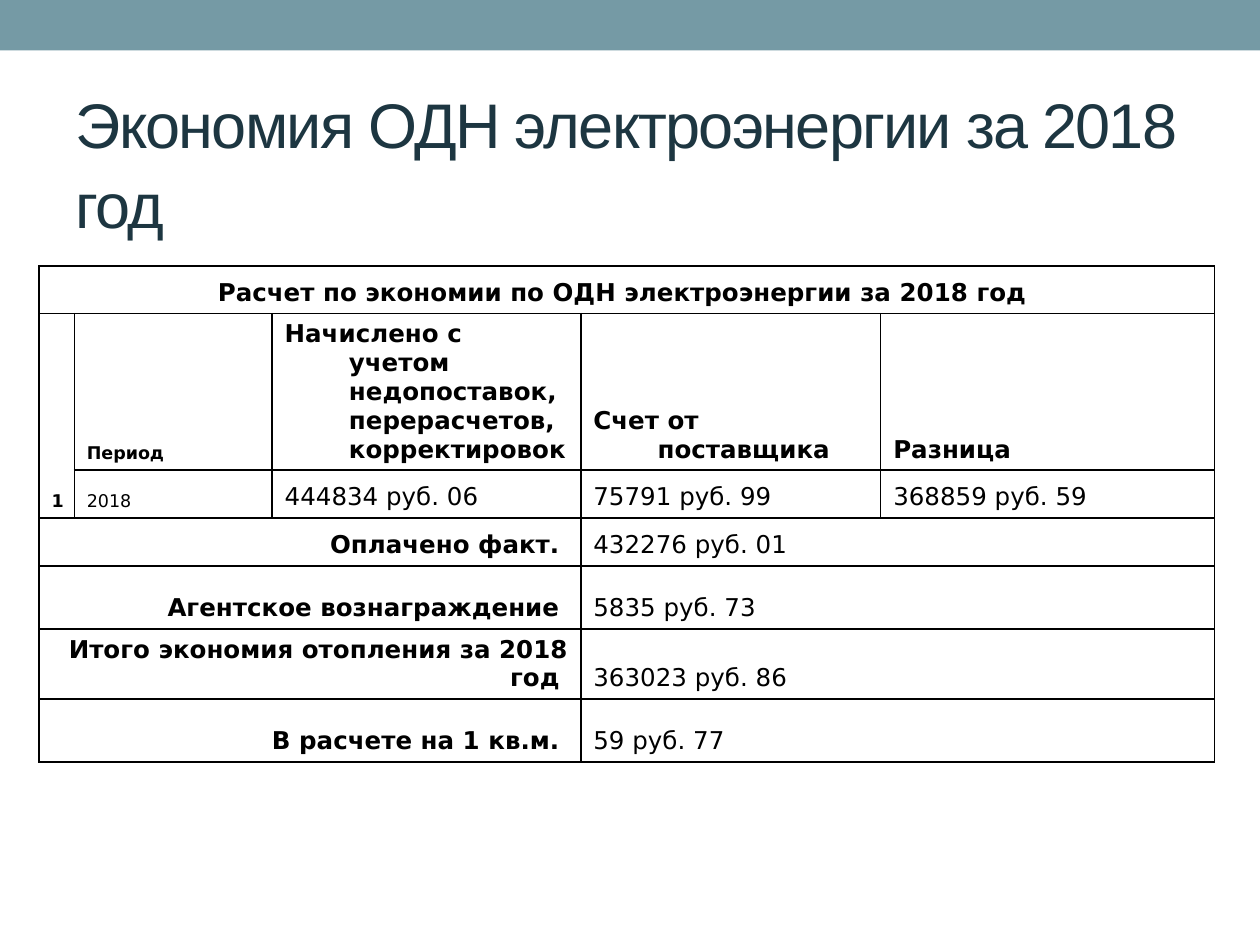
from lxml.etree import SubElement
from pptx import Presentation
from pptx.dml.color import RGBColor as RGB
from pptx.enum.shapes import MSO_SHAPE as SHAPE
from pptx.enum.text import MSO_ANCHOR as ANCHOR, MSO_AUTO_SIZE as AUTO, PP_ALIGN as ALIGN
from pptx.oxml.ns import qn
from pptx.util import Inches, Pt

COLORS = {"bar": "759AA5", "title": "1D3641", "text": "000000", "border": "000000"}
COLS = [0.28, 1.57, 2.45, 2.38, 2.65]
ROWS = [0.38, 1.07, 0.38, 0.38, 0.5, 0.38, 0.5]
HEADERS = ["Начислено с учетом недопоставок, перерасчетов, корректировок",
           "Счет от поставщика", "Разница"]
AMOUNTS = ["444834 руб. 06", "75791 руб. 99", "368859 руб. 59"]
TOTALS = [("Оплачено факт. ", "432276 руб. 01"),
          ("Агентское вознаграждение ", "5835 руб. 73"),
          ("Итого экономия отопления за 2018 год ", "363023 руб. 86"),
          ("В расчете на 1 кв.м. ", "59 руб. 77")]


def apply(obj, values):
    for name, value in values.items():
        setattr(obj, name, value)


class SlideBuilder:
    title_font = {"name": "Arial", "size": Pt(36), "bold": False}
    cell_font = {"name": "DejaVu Sans", "size": Pt(14), "bold": False}

    def __init__(self, prs):
        self.s = prs.slides.add_slide(prs.slide_layouts[5])

    def bar(self, x, y, w, h):
        sp = self.s.shapes.add_shape(SHAPE.RECTANGLE, *map(Inches, (x, y, w, h)))
        sp.shadow.inherit = False
        sp.fill.solid()
        sp.fill.fore_color.rgb = RGB.from_string(COLORS["bar"])
        sp.line.fill.background()

    def title(self, text, x, y, w, h):
        sp = self.s.shapes.title
        apply(sp, dict(zip(("left", "top", "width", "height"), map(Inches, (x, y, w, h)))))
        tf = sp.text_frame
        apply(tf, {"word_wrap": True, "auto_size": AUTO.NONE, "vertical_anchor": ANCHOR.TOP})
        p = tf.paragraphs[0]
        apply(p, {"alignment": ALIGN.LEFT, "line_spacing": 1.05})
        r = p.add_run()
        r.text = text
        apply(r.font, self.title_font)
        r.font.color.rgb = RGB.from_string(COLORS["title"])
        r.font._element.set("spc", "-100")

    def table(self, x, y, cols, rows):
        frame = self.s.shapes.add_table(len(rows), len(cols), Inches(x), Inches(y),
                                        Inches(sum(cols)), Inches(sum(rows)))
        tbl = frame.table
        apply(tbl, {"first_row": False, "horz_banding": False})
        for col, w in zip(tbl.columns, cols):
            col.width = Inches(w)
        for row, h in zip(tbl.rows, rows):
            row.height = Inches(h)
        for cell in tbl.iter_cells():
            self.borders(cell)
            cell.fill.background()
        return tbl

    def borders(self, cell):
        tcPr = cell._tc.get_or_add_tcPr()
        for side in ("a:lnL", "a:lnR", "a:lnT", "a:lnB"):
            ln = SubElement(tcPr, qn(side), w=str(Pt(1)))
            fill = SubElement(ln, qn("a:solidFill"))
            SubElement(fill, qn("a:srgbClr"), val=COLORS["border"])

    def cell(self, tbl, row, col, text, end=None, align=ALIGN.LEFT, **font):
        cell = tbl.cell(row, col)
        if end:
            cell.merge(tbl.cell(*end))
        cell.vertical_anchor = ANCHOR.BOTTOM
        p = cell.text_frame.paragraphs[0]
        p.alignment = align
        pPr = p._p.get_or_add_pPr()
        pPr.set("marL", str(Inches(0.51)))
        pPr.set("indent", str(Inches(-0.51)))
        r = p.add_run()
        r.text = text
        apply(r.font, {**self.cell_font, **font})
        r.font.color.rgb = RGB.from_string(COLORS["text"])


def main():
    prs = Presentation()
    apply(prs, {"slide_width": Inches(10), "slide_height": Inches(7.5)})
    b = SlideBuilder(prs)
    b.bar(0, 0, 10, 0.4)
    b.title("Экономия ОДН электроэнергии за 2018 год", 0.5, 0.6, 9, 1.08)

    tbl = b.table(0.31, 2.11, COLS, ROWS)
    b.cell(tbl, 0, 0, "Расчет по экономии по ОДН электроэнергии за 2018 год ",
           end=(0, 4), align=ALIGN.CENTER, bold=True)
    b.cell(tbl, 1, 0, "1", end=(2, 0), align=ALIGN.RIGHT, bold=True, size=Pt(10))
    b.cell(tbl, 1, 1, "Период", bold=True, size=Pt(10))
    b.cell(tbl, 2, 1, "2018", size=Pt(10))
    for col, (header, amount) in enumerate(zip(HEADERS, AMOUNTS), start=2):
        b.cell(tbl, 1, col, header, bold=True)
        b.cell(tbl, 2, col, amount)
    for row, (label, amount) in enumerate(TOTALS, start=3):
        b.cell(tbl, row, 0, label, end=(row, 2), align=ALIGN.RIGHT, bold=True)
        b.cell(tbl, row, 3, amount, end=(row, 4))
    prs.save("out.pptx")


if __name__ == "__main__":
    main()
